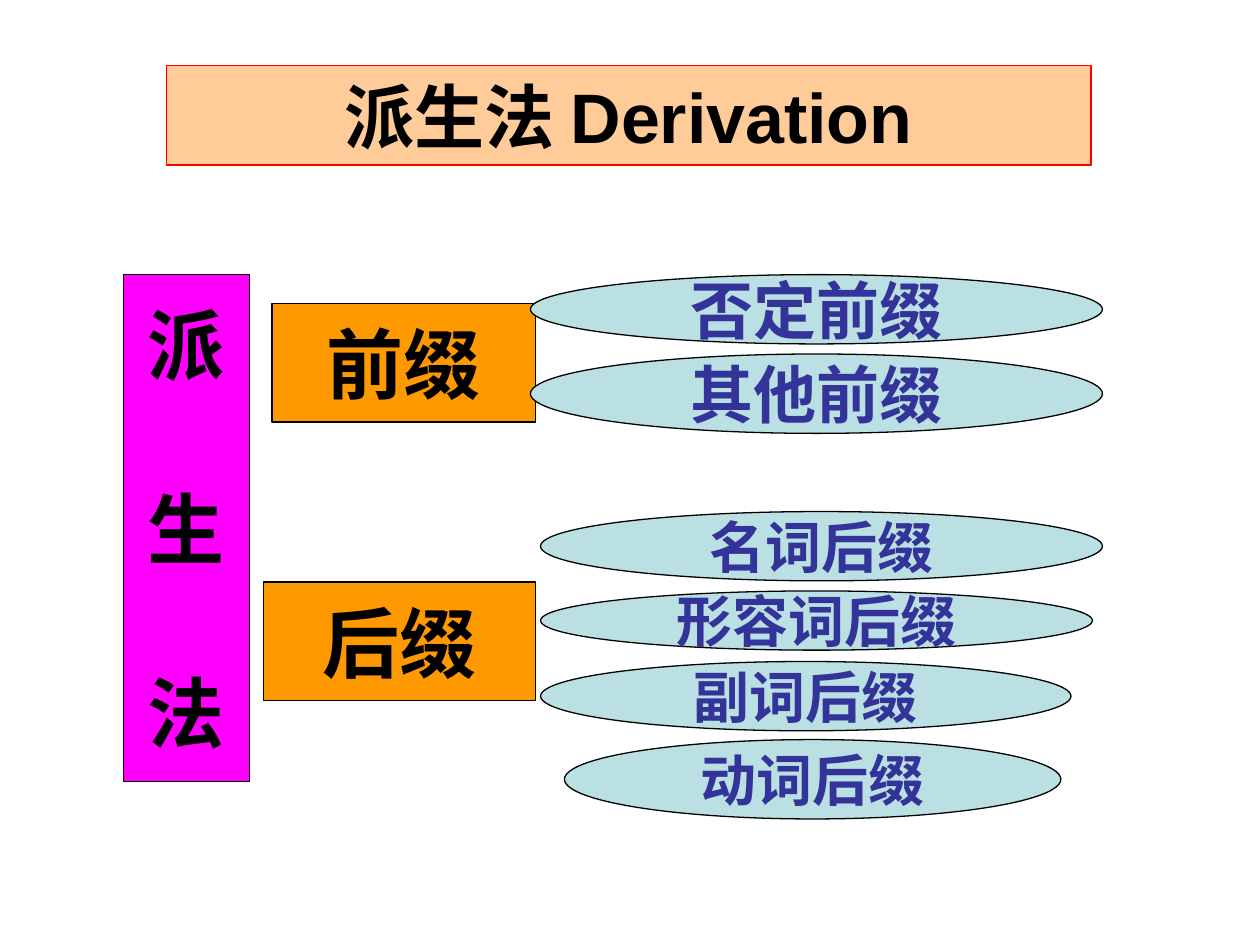
"""Build a slide that maps Chinese word derivation into prefixes and suffixes."""
from pptx import Presentation, util as u
from pptx.dml.color import RGBColor
from pptx.enum import shapes, text

COLORS = {"peach": "FFCC99", "red": "FF0000", "magenta": "FF00FF",
          "orange": "FF9900", "aqua": "BBE0E3", "navy": "333399",
          "black": "000000"}

TITLE = ("派生法 Derivation", (1.32, 0.52, 7.34, 0.79))
ROOT = ("派\n生\n法", (0.98, 2.18, 1, 4.02))
BRANCHES = [
    ("前缀", (2.16, 2.41, 2.09, 0.94), 36, [
        ("否定前缀", (4.21, 2.18, 4.54, 0.55)),
        ("其他前缀", (4.21, 2.81, 4.54, 0.63)),
    ]),
    ("后缀", (2.09, 4.62, 2.16, 0.94), 32, [
        ("名词后缀", (4.29, 4.06, 4.46, 0.55)),
        ("形容词后缀", (4.29, 4.69, 4.38, 0.47)),
        ("副词后缀", (4.29, 5.25, 4.21, 0.55)),
        ("动词后缀", (4.48, 5.87, 3.94, 0.63)),
    ]),
]
ROOT_PITCH = 52.6


def color(name):
    return RGBColor.from_string(COLORS[name])


def add_box(page, words, place, *, fill, kind=shapes.MSO_SHAPE.RECTANGLE,
            line="black", ink="black", size=44, font="Times New Roman",
            wrap=False, pitch=None):
    box = page.shapes.add_shape(kind, *map(u.Inches, place))
    box.shadow.inherit = False
    box.fill.solid()
    box.fill.fore_color.rgb = color(fill)
    box.line.color.rgb = color(line)
    box.line.width = u.Pt(0.75)
    frame = box.text_frame
    frame.word_wrap = wrap
    frame.vertical_anchor = text.MSO_ANCHOR.MIDDLE
    lines = words.split("\n")
    for index, words_in_line in enumerate(lines):
        para = frame.add_paragraph() if index else frame.paragraphs[0]
        para.alignment = text.PP_ALIGN.CENTER
        if pitch:
            para.line_spacing = u.Pt(pitch)
            para.space_after = u.Pt(pitch if index < len(lines) - 1 else 0)
        span = para.add_run()
        span.text = words_in_line
        span.font.name = font
        span.font.size = u.Pt(size)
        span.font.bold = True
        span.font.color.rgb = color(ink)


def main():
    deck = Presentation()
    deck.slide_width, deck.slide_height = u.Inches(10), u.Inches(7.5)
    page = deck.slides.add_slide(deck.slide_layouts[6])
    add_box(page, *TITLE, fill="peach", line="red", size=40, font="Arial",
            wrap=True)
    add_box(page, *ROOT, fill="magenta", pitch=ROOT_PITCH)
    for name, place, size, leaves in BRANCHES:
        add_box(page, name, place, fill="orange")
        for leaf, leaf_place in leaves:
            add_box(page, leaf, leaf_place, fill="aqua", ink="navy", size=size,
                    kind=shapes.MSO_SHAPE.OVAL)
    deck.save("out.pptx")


if __name__ == "__main__":
    main()
